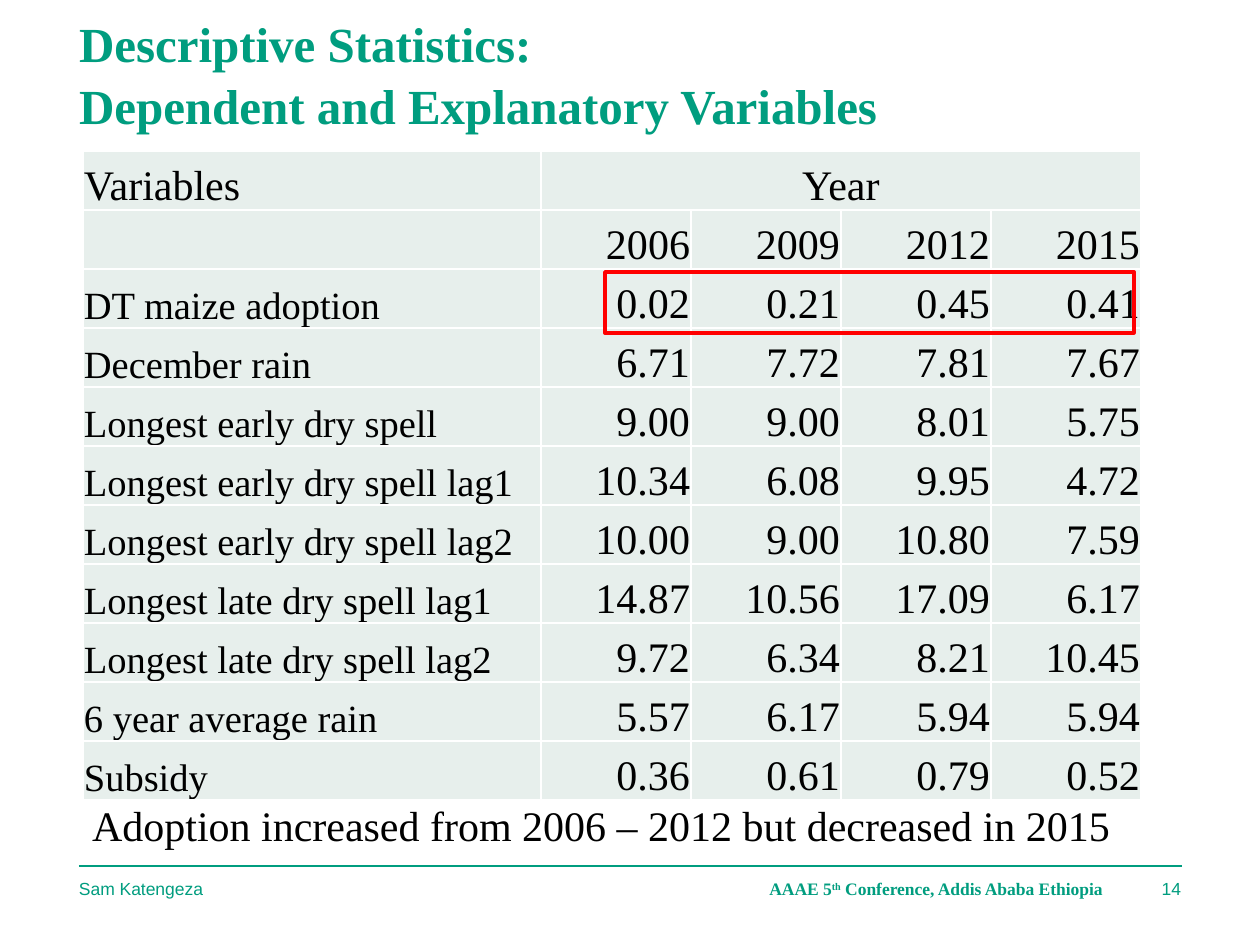
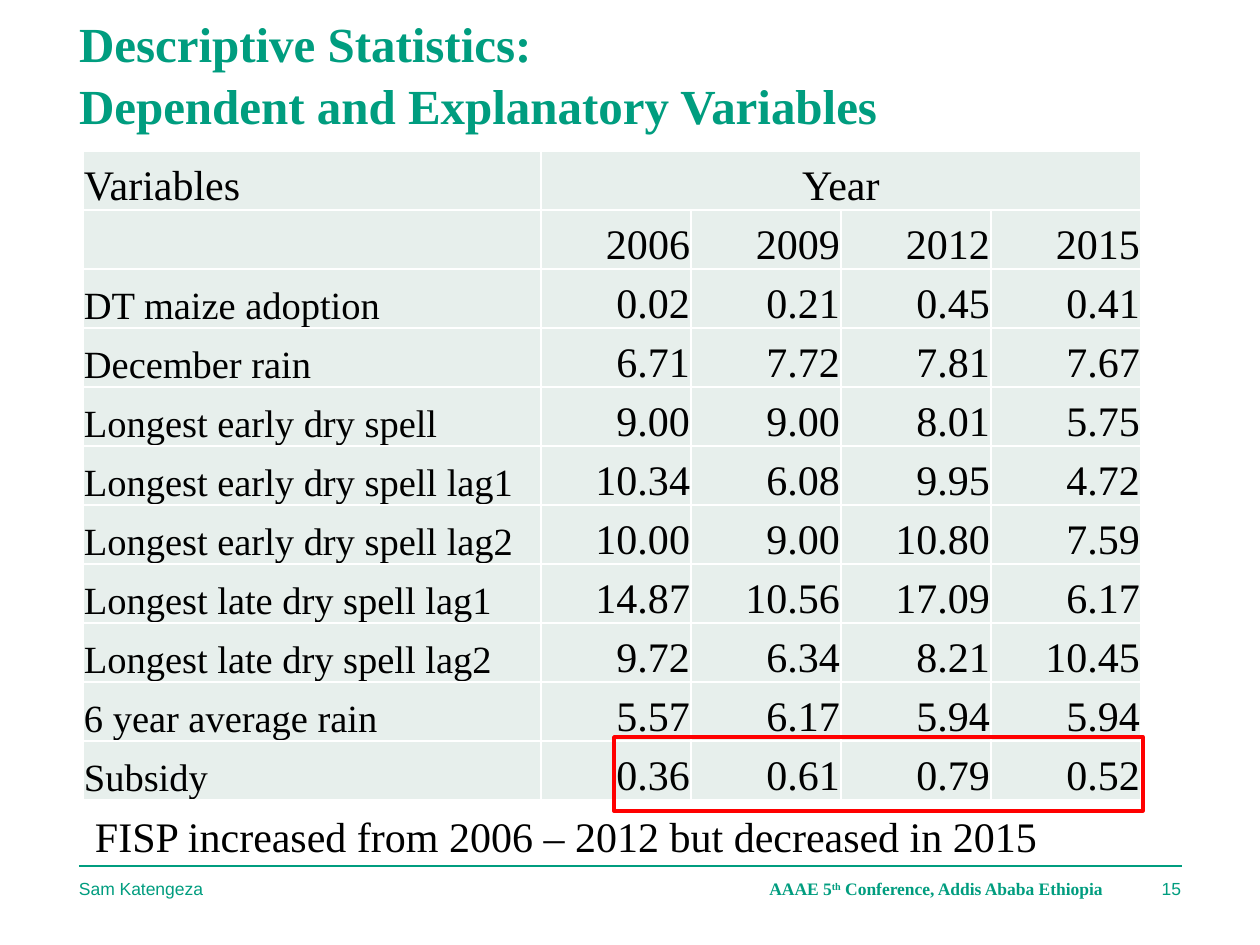
from pptx import Presentation
from pptx.dml.color import RGBColor
from pptx.enum.shapes import MSO_CONNECTOR, MSO_SHAPE
from pptx.enum.text import MSO_ANCHOR, MSO_AUTO_SIZE, PP_ALIGN
from pptx.oxml.ns import qn
from pptx.util import Emu, Pt
from lxml.etree import SubElement

GREEN = RGBColor(0x00, 0x9D, 0x7F)
PALE = RGBColor(0xE7, 0xEF, 0xEC)
RED = RGBColor(0xFF, 0x00, 0x00)
BLACK = RGBColor(0x00, 0x00, 0x00)
SERIF, SANS = "Times New Roman", "Arial"

TITLE = dict(name=SERIF, size=Pt(28), bold=True)
CONFERENCE = dict(name=SERIF, size=Pt(10), bold=True)
FOOTER = dict(name=SANS, size=Pt(10))
BODY = dict(name=SERIF, size=Pt(24))
LABEL = dict(name=SERIF, size=Pt(22))

SCALE = 914400 / 126  # EMU in one px
ROW_H, LABEL_W, YEAR_W = 59, 458, 150

ROWS = [
    ["Variables", "Year", "", "", ""],
    ["", "2006", "2009", "2012", "2015"],
    ["DT maize adoption", "0.02", "0.21", "0.45", "0.41"],
    ["December rain", "6.71", "7.72", "7.81", "7.67"],
    ["Longest early dry spell", "9.00", "9.00", "8.01", "5.75"],
    ["Longest early dry spell lag1", "10.34", "6.08", "9.95", "4.72"],
    ["Longest early dry spell lag2", "10.00", "9.00", "10.80", "7.59"],
    ["Longest late dry spell lag1", "14.87", "10.56", "17.09", "6.17"],
    ["Longest late dry spell lag2", "9.72", "6.34", "8.21", "10.45"],
    ["6 year average rain", "5.57", "6.17", "5.94", "5.94"],
    ["Subsidy", "0.36", "0.61", "0.79", "0.52"],
]

# Slide number, caption, caption place, highlight frame
SLIDES = [
    ("14", "Adoption increased from 2006 – 2012 but decreased in 2015",
     (79, 793, 1101, 63), (605, 272, 529, 61)),
    ("15", "FISP increased from 2006 – 2012 but decreased in 2015",
     (82, 804, 1101, 63), (614, 737, 529, 74)),
]


def px(*lengths):
    return [Emu(round(n * SCALE)) for n in lengths]


def write(tf, texts, fmt, color, align, anchor=MSO_ANCHOR.MIDDLE, margins=(0, 0, 0, 0)):
    tf.word_wrap = True
    tf.auto_size = MSO_AUTO_SIZE.NONE
    tf.vertical_anchor = anchor
    tf.margin_left, tf.margin_top, tf.margin_right, tf.margin_bottom = px(*margins)
    p = tf.paragraphs[0]
    p.alignment = align
    for text in texts:
        r = p.add_run()
        r.text = text
        for key, value in fmt.items():
            setattr(r.font, key, value)
        r.font.color.rgb = color
    return p


prs = Presentation()
prs.slide_width, prs.slide_height = px(1260, 945)

for number, caption, caption_at, frame_at in SLIDES:
    s = prs.slides.add_slide(prs.slide_layouts[5])

    # Title
    title = s.shapes.title
    title.left, title.top, title.width, title.height = px(79, 16, 1017, 118)
    p = write(title.text_frame, ["Descriptive Statistics: "], TITLE, GREEN,
              PP_ALIGN.LEFT, MSO_ANCHOR.BOTTOM)
    p.line_spacing = 1.05
    p.add_line_break()
    write(title.text_frame, ["Dependent and Explanatory Variables"], TITLE, GREEN,
          PP_ALIGN.LEFT, MSO_ANCHOR.BOTTOM)

    # Footer
    rule = s.shapes.add_connector(MSO_CONNECTOR.STRAIGHT, *px(79, 866, 1182, 866))
    rule.line.color.rgb = GREEN
    rule.line.width = Pt(1)
    SubElement(rule._element.spPr, qn("a:effectLst"))
    for texts, at, fmt, align in [
        (["AAAE 5", "th", " Conference, Addis Ababa Ethiopia"],
         (737, 878, 398, 22), CONFERENCE, PP_ALIGN.CENTER),
        ([number], (1139, 878, 42, 22), FOOTER, PP_ALIGN.RIGHT),
        (["Sam Katengeza"], (79, 878, 655, 22), FOOTER, PP_ALIGN.LEFT),
    ]:
        tf = s.shapes.add_textbox(*px(*at)).text_frame
        p = write(tf, texts, fmt, GREEN, align)
        for r in p.runs:
            if r.text == "th":
                r.font._element.set("baseline", "30000")

    # Table
    table = s.shapes.add_table(len(ROWS), 5, *px(
        83, 151, LABEL_W + 4 * YEAR_W, ROW_H * len(ROWS))).table
    table.first_row = table.horz_banding = False
    for col, width in zip(table.columns, px(LABEL_W, *[YEAR_W] * 4)):
        col.width = width
    for i, values in enumerate(ROWS):
        table.rows[i].height = px(ROW_H)[0]
        for j, value in enumerate(values):
            cell = table.cell(i, j)
            tcPr = cell._tc.get_or_add_tcPr()
            for side in ("a:lnL", "a:lnR", "a:lnT", "a:lnB"):
                ln = SubElement(tcPr, qn(side), w="12700")
                SubElement(SubElement(ln, qn("a:solidFill")), qn("a:srgbClr"), val="FFFFFF")
            cell.fill.solid()
            cell.fill.fore_color.rgb = PALE
            cell.vertical_anchor = MSO_ANCHOR.BOTTOM
            cell.margin_left, cell.margin_top, cell.margin_right, cell.margin_bottom = px(1, 1, 1, 0)
            if not value:
                continue
            p = cell.text_frame.paragraphs[0]
            p.alignment = (PP_ALIGN.LEFT if j == 0 else
                           PP_ALIGN.CENTER if i == 0 else PP_ALIGN.RIGHT)
            r = p.add_run()
            r.text = value
            for key, setting in (LABEL if j == 0 and i > 1 else BODY).items():
                setattr(r.font, key, setting)
            r.font.color.rgb = BLACK
    table.cell(0, 1).merge(table.cell(0, 4))

    # Caption
    tf = s.shapes.add_textbox(*px(*caption_at)).text_frame
    write(tf, [caption], BODY, BLACK, PP_ALIGN.JUSTIFY, margins=(13, 6, 13, 6))

    # Highlight frame
    frame = s.shapes.add_shape(MSO_SHAPE.RECTANGLE, *px(*frame_at))
    frame.shadow.inherit = False
    frame.fill.background()
    frame.line.color.rgb = RED
    frame.line.width = Pt(2)

prs.save("out.pptx")
